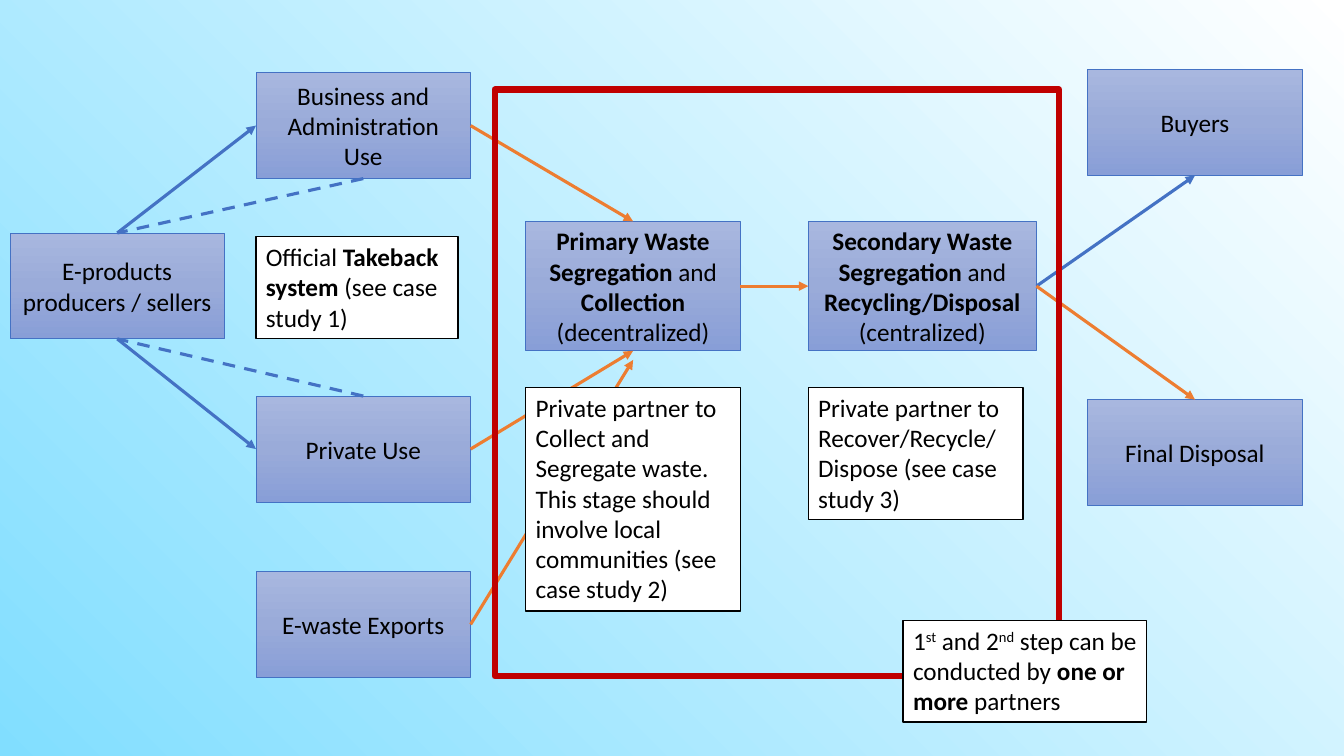
from lxml.etree import SubElement
from pptx import Presentation
from pptx.dml.color import RGBColor
from pptx.enum.dml import MSO_LINE
from pptx.enum.shapes import MSO_CONNECTOR, MSO_SHAPE
from pptx.enum.text import MSO_ANCHOR, MSO_AUTO_SIZE, PP_ALIGN
from pptx.oxml.ns import qn
from pptx.util import Cm, Pt

BLUE, ORANGE, RED = "4472C4", "ED7D31", "C00000"
BLACK, WHITE = "000000", "FFFFFF"
BOX_STOPS = [(0, "A8B7DF"), (50, "9AABD9"), (100, "889ED7")]
SKY_STOPS = [(0, WHITE), (100, "81DEFF")]
TOP, LEFT, BOTTOM, RIGHT = range(4)
BOX_WIDTH, BOX_HEIGHT = 5.41, 2.67


def color(value):
    return RGBColor.from_string(value)


class FlowSlide:
    font_name = "Calibri"
    font_size = Pt(18)

    def __init__(self, slide):
        self.slide = slide

    def gradient(self, fill, owner, stops):
        """Fill with the given stops and return the gradient element, still without a direction."""
        fill.gradient()
        gradient = next(owner.iter(qn("a:gradFill")))
        gradient.clear()
        stop_list = SubElement(gradient, qn("a:gsLst"))
        for position, value in stops:
            stop = SubElement(stop_list, qn("a:gs"), pos=str(position * 1000))
            SubElement(stop, qn("a:srgbClr"), val=value)
        return gradient

    def background(self):
        """Radial gradient that spreads from the top right corner."""
        gradient = self.gradient(self.slide.background.fill, self.slide.element, SKY_STOPS)
        circle = SubElement(gradient, qn("a:path"), {"path": "circle"})
        SubElement(circle, qn("a:fillToRect"), l="100000", b="100000")

    def outline(self, shape, value, width):
        shape.line.color.rgb = color(value)
        shape.line.width = Pt(width)

    def add_text(self, shape, paragraphs, alignment):
        """Each paragraph is a list of (text, style); style is "", "bold" or "super"."""
        frame = shape.text_frame
        frame.word_wrap = True
        for index, parts in enumerate(paragraphs):
            paragraph = frame.add_paragraph() if index else frame.paragraphs[0]
            paragraph.alignment = alignment
            paragraph.font.name = self.font_name
            paragraph.font.size = self.font_size
            paragraph.font.color.rgb = color(BLACK)
            for text, style in parts:
                run = paragraph.add_run()
                run.text = text
                if style == "bold":
                    run.font.bold = True
                elif style == "super":
                    run.font._element.set("baseline", "30000")

    def rectangle(self, left, top, width, height):
        shape = self.slide.shapes.add_shape(
            MSO_SHAPE.RECTANGLE, Cm(left), Cm(top), Cm(width), Cm(height))
        shape.shadow.inherit = False
        shape.element.remove(shape.element.find(qn("p:style")))
        return shape

    def box(self, left, top, *parts, width=BOX_WIDTH, height=BOX_HEIGHT):
        shape = self.rectangle(left, top, width, height)
        gradient = self.gradient(shape.fill, shape.element, BOX_STOPS)
        SubElement(gradient, qn("a:lin"), ang="5400000", scaled="0")
        self.outline(shape, BLUE, 0.5)
        shape.text_frame.vertical_anchor = MSO_ANCHOR.MIDDLE
        self.add_text(shape, [parts], PP_ALIGN.CENTER)
        return shape

    def note(self, left, top, width, height, *paragraphs):
        shape = self.slide.shapes.add_textbox(Cm(left), Cm(top), Cm(width), Cm(height))
        shape.fill.solid()
        shape.fill.fore_color.rgb = color(WHITE)
        self.outline(shape, BLACK, 1)
        self.add_text(shape, paragraphs, PP_ALIGN.LEFT)
        shape.text_frame.auto_size = MSO_AUTO_SIZE.SHAPE_TO_FIT_TEXT

    def frame(self, left, top, width, height):
        shape = self.rectangle(left, top, width, height)
        shape.fill.background()
        self.outline(shape, RED, 4.5)

    def connect(self, start, start_side, end, end_side, value, dashed=False, gap=0):
        """Join two boxes; a gap leaves the end loose, that far below its side."""
        connector = self.slide.shapes.add_connector(MSO_CONNECTOR.STRAIGHT, 0, 0, 0, 0)
        connector.begin_connect(start, start_side)
        if gap:
            connector.end_x = end.left + end.width // 2
            connector.end_y = end.top + end.height + Cm(gap)
        else:
            connector.end_connect(end, end_side)
        self.outline(connector, value, 2.25)
        if dashed:
            connector.line.dash_style = MSO_LINE.DASH
        else:
            SubElement(connector.line._get_or_add_ln(), qn("a:tailEnd"), type="triangle")
        SubElement(connector.element.spPr, qn("a:effectLst"))


def main():
    presentation = Presentation()
    presentation.slide_width, presentation.slide_height = Cm(33.87), Cm(19.05)
    flow = FlowSlide(presentation.slides.add_slide(presentation.slide_layouts[6]))
    flow.background()

    use_left, primary_left, secondary_left, outlet_left = 6.45, 13.25, 20.37, 27.41
    stage_top, stage_height, note_top = 5.58, 3.26, 9.76

    producers = flow.box(0.25, 5.87, ("E-products producers / sellers", ""))
    business = flow.box(use_left, 1.83, ("Business and Administration Use", ""))
    private = flow.box(use_left, 9.98, ("Private Use", ""))
    exports = flow.box(use_left, 14.4, ("E-waste Exports", ""))
    primary = flow.box(
        primary_left, stage_top, ("Primary Waste Segregation ", "bold"), ("and ", ""),
        ("Collection", "bold"), (" (decentralized)", ""), height=stage_height)
    secondary = flow.box(
        secondary_left, stage_top, ("Secondary Waste Segregation ", "bold"), ("and ", ""),
        ("Recycling/Disposal ", "bold"), ("(centralized)", ""),
        width=5.75, height=stage_height)
    buyers = flow.box(outlet_left, 1.75, ("Buyers", ""))
    disposal = flow.box(outlet_left, 10.07, ("Final Disposal", ""))

    flow.connect(producers, TOP, business, LEFT, BLUE)
    flow.connect(producers, BOTTOM, private, LEFT, BLUE)
    flow.connect(business, BOTTOM, producers, TOP, BLUE, dashed=True)
    flow.connect(private, TOP, producers, BOTTOM, BLUE, dashed=True)
    flow.connect(business, RIGHT, primary, TOP, ORANGE)
    flow.connect(private, RIGHT, primary, BOTTOM, ORANGE)
    flow.connect(exports, RIGHT, primary, BOTTOM, ORANGE, gap=0.23)
    flow.connect(primary, RIGHT, secondary, LEFT, ORANGE)
    flow.connect(secondary, RIGHT, buyers, BOTTOM, BLUE)
    flow.connect(secondary, RIGHT, disposal, TOP, ORANGE)

    flow.note(use_left, 5.96, 5.09, 2.57,
              [("Official ", ""), ("Takeback system ", "bold"), ("(see case study 1)", "")])
    flow.note(primary_left, note_top, BOX_WIDTH, 5.64,
              [("Private partner to Collect and Segregate waste.", "")],
              [("This stage should involve local communities (see case study 2)", "")])
    flow.note(secondary_left, note_top, BOX_WIDTH, 3.33,
              [("Private partner to Recover/Recycle/ Dispose (see case study 3)", "")])
    flow.frame(12.47, 2.26, 14.22, 14.78)
    flow.note(22.76, 15.63, 6.13, 2.57,
              [("1", ""), ("st", "super"), (" and 2", ""), ("nd", "super"),
               (" step can be conducted by ", ""), ("one or more", "bold"), (" partners", "")])

    presentation.save("out.pptx")


if __name__ == "__main__":
    main()
